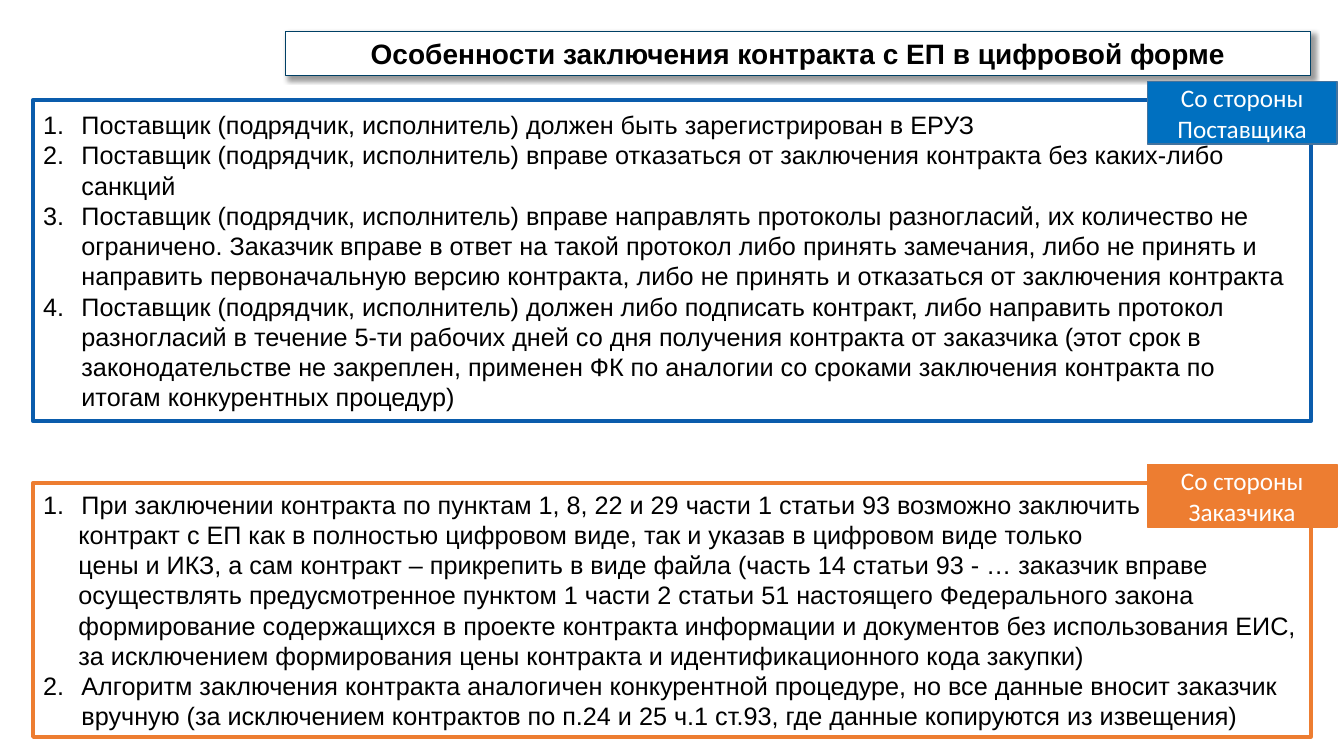
"""Build the slide on signing a contract in digital form."""
import pptx
import pptx.util
import pptx.dml.color
import pptx.enum.shapes
import pptx.enum.text
from lxml import etree
from pptx.util import Inches

NS = "http://schemas.openxmlformats.org/drawingml/2006/main"
ALIGN = pptx.enum.text.PP_ALIGN
ANCHOR = pptx.enum.text.MSO_ANCHOR
RECT = pptx.enum.shapes.MSO_SHAPE.RECTANGLE


def paint(form, color):
    if hasattr(form, "solid"):
        form.solid()
        form = form.fore_color
    form.rgb = pptx.dml.color.RGBColor.from_string(color)


def write(para, text, size=18, font="Arial", color="000000", bold=False,
          align=ALIGN.LEFT, num=None, left=0):
    para.alignment = align
    para.line_spacing = 1.0
    para.space_before = pptx.util.Pt(0)
    run = para.add_run()
    run.text = text
    run.font.size = pptx.util.Pt(size)
    run.font.name = font
    run.font.bold = bold
    paint(run.font.fill, color)
    props = para._p.get_or_add_pPr()
    props.set("marL", str(Inches(left)))
    props.set("indent", str(Inches(-left if num else 0)))
    if num:
        etree.SubElement(props, f"{{{NS}}}buFont", typeface="Arial")
        etree.SubElement(props, f"{{{NS}}}buAutoNum", type="arabicPeriod",
                         startAt=str(num))


deck = pptx.Presentation()
deck.slide_width = Inches(13.33)
deck.slide_height = Inches(7.5)
slide = deck.slides.add_slide(deck.slide_layouts[5])

title = slide.shapes.title
title.left, title.top = Inches(2.83), Inches(0.31)
title.width, title.height = Inches(10.17), Inches(0.44)
paint(title.fill, "FFFFFF")
paint(title.line.fill, "004065")
title.line.width = pptx.util.Pt(0.75)
title.text_frame.auto_size = pptx.enum.text.MSO_AUTO_SIZE.NONE
title.text_frame.vertical_anchor = ANCHOR.MIDDLE
write(title.text_frame.paragraphs[0],
      "Особенности заключения контракта с ЕП в цифровой форме",
      size=20, bold=True, align=ALIGN.CENTER)
effects = etree.SubElement(title._element.spPr, f"{{{NS}}}effectLst")
shade = etree.SubElement(
    effects, f"{{{NS}}}outerShdw", blurRad=str(pptx.util.Pt(4)),
    dist=str(pptx.util.Pt(3)), dir="2700000", algn="tl", rotWithShape="0")
black = etree.SubElement(shade, f"{{{NS}}}srgbClr", val="000000")
etree.SubElement(black, f"{{{NS}}}alpha", val="40000")

seller = [
    (1, "Поставщик (подрядчик, исполнитель) должен быть зарегистрирован в ЕРУЗ"),
    (2, "Поставщик (подрядчик, исполнитель) вправе отказаться от заключения "
        "контракта без каких-либо санкций"),
    (3, "Поставщик (подрядчик, исполнитель) вправе направлять протоколы "
        "разногласий, их количество не ограничено. Заказчик вправе в ответ на "
        "такой протокол либо принять замечания, либо не принять и направить "
        "первоначальную версию контракта, либо не принять и отказаться от "
        "заключения контракта"),
    (4, "Поставщик (подрядчик, исполнитель) должен либо подписать контракт, либо "
        "направить протокол разногласий в течение 5-ти рабочих дней со дня "
        "получения контракта от заказчика (этот срок в законодательстве не "
        "закреплен, применен ФК по аналогии со сроками заключения контракта по "
        "итогам конкурентных процедур)"),
]
buyer = [
    (1, "При заключении контракта по пунктам 1, 8, 22 и 29 части 1 статьи 93 "
        "возможно заключить"),
    (None, "контракт с ЕП как в полностью цифровом виде, так и указав в цифровом "
           "виде только"),
    (None, "цены и ИКЗ, а сам контракт – прикрепить в виде файла (часть 14 статьи "
           "93 - … заказчик вправе"),
    (None, "осуществлять предусмотренное пунктом 1 части 2 статьи 51 настоящего "
           "Федерального закона"),
    (None, "формирование содержащихся в проекте контракта информации и документов "
           "без использования ЕИС,"),
    (None, "за исключением формирования цены контракта и идентификационного кода "
           "закупки)"),
    (2, "Алгоритм заключения контракта аналогичен конкурентной процедуре, но все "
        "данные вносит заказчик вручную (за исключением контрактов по п.24 и 25 "
        "ч.1 ст.93, где данные копируются из извещения)"),
]

for top, height, edge, items in [(0.99, 3.19, "0A5CAC", seller),
                                 (4.79, 2.52, "ED7D31", buyer)]:
    box = slide.shapes.add_shape(RECT, Inches(0.33), Inches(top),
                                 Inches(12.67), Inches(height))
    box.shadow.inherit = False
    box.fill.background()
    paint(box.line.fill, edge)
    box.line.width = pptx.util.Pt(3)
    frame = box.text_frame
    frame.word_wrap = True
    frame.vertical_anchor = ANCHOR.MIDDLE
    for index, (num, text) in enumerate(items):
        para = frame.add_paragraph() if index else frame.paragraphs[0]
        write(para, text, num=num, left=0.38 if num else 0.35)

for top, fill, edge, text in [
        (0.81, "0070C0", "43739E", "Со стороны Поставщика"),
        (4.61, "ED7D31", "ED7D31", "Со стороны Заказчика")]:
    tag = slide.shapes.add_shape(RECT, Inches(11.38), Inches(top),
                                 Inches(1.88), Inches(0.62))
    tag.shadow.inherit = False
    paint(tag.fill, fill)
    paint(tag.line.fill, edge)
    tag.line.width = pptx.util.Pt(1)
    tag.text_frame.word_wrap = True
    tag.text_frame.vertical_anchor = ANCHOR.MIDDLE
    write(tag.text_frame.paragraphs[0], text, font="Calibri", color="FFFFFF",
          align=ALIGN.CENTER)

deck.save("out.pptx")
